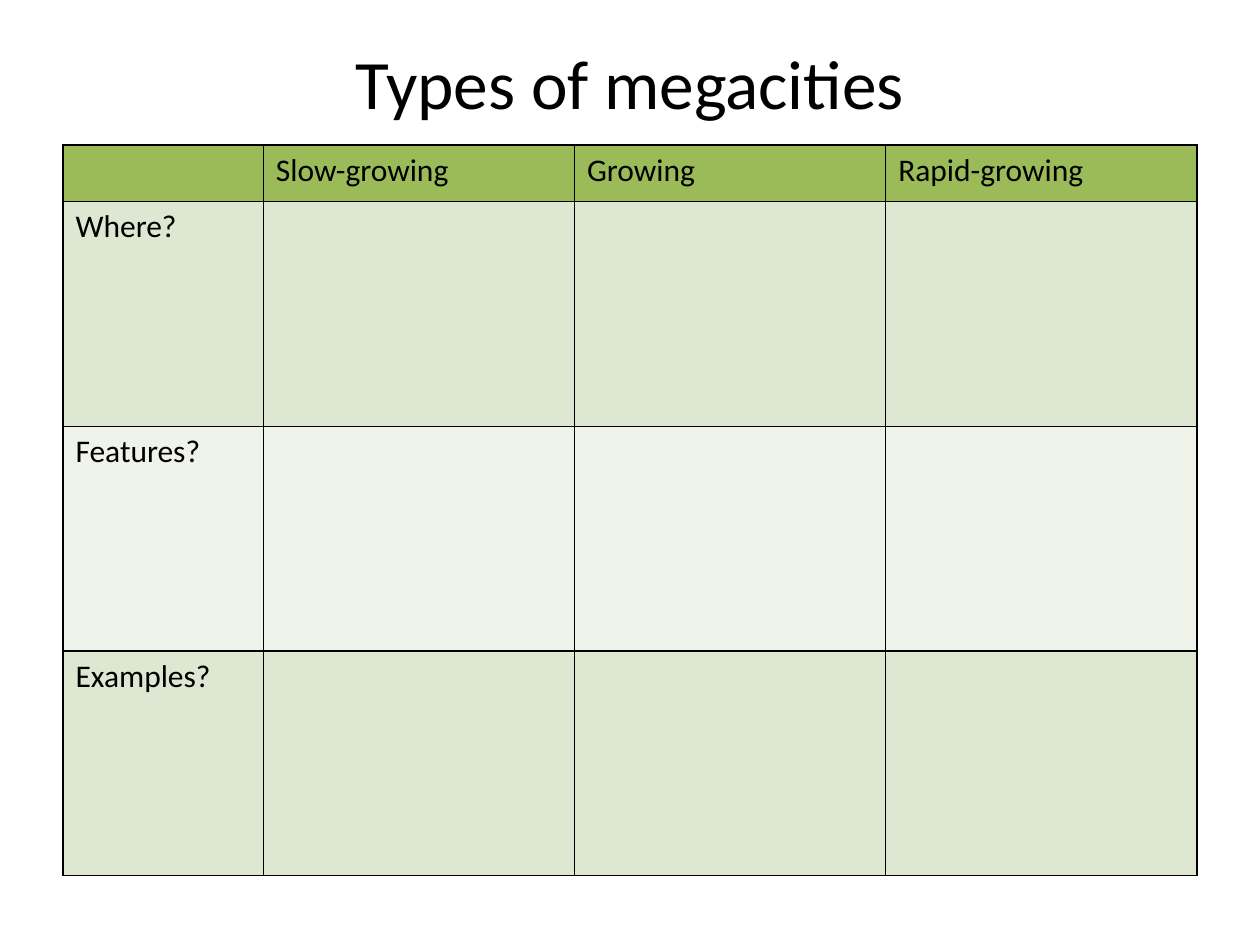
from dataclasses import dataclass

from lxml.etree import SubElement
from pptx import Presentation
from pptx.dml.color import RGBColor
from pptx.enum.text import MSO_ANCHOR, PP_ALIGN
from pptx.oxml.ns import qn
from pptx.util import Inches, Pt


@dataclass(frozen=True)
class Theme:
    """Hold the colours, font and type sizes."""
    font: str = "Calibri"
    ink: str = "000000"
    head: str = "9BBB59"
    bands: tuple = ("DEE7D1", "EFF3EA")
    title: float = 39.6
    body: float = 18
    rule: float = 1


THEME = Theme()
WIDE, HIGH = 10, 7.5
HEADS = ("Slow-growing", "Growing", "Rapid-growing")
ROWS = ("Where?", "Features?", "Examples?")


def add_run(para, text, size):
    """Add one styled run to a paragraph."""
    run = para.add_run()
    run.text = text
    run.font.name = THEME.font
    run.font.size = Pt(size)
    run.font.color.rgb = RGBColor.from_string(THEME.ink)


def add_title(slide, box, text):
    """Place the centred title in its box."""
    frame = slide.shapes.add_textbox(*map(Inches, box)).text_frame
    frame.word_wrap = True
    frame.vertical_anchor = MSO_ANCHOR.MIDDLE
    frame.margin_top = frame.margin_bottom = 0
    para = frame.paragraphs[0]
    para.alignment = PP_ALIGN.CENTER
    add_run(para, text, THEME.title)


def add_rules(cell):
    """Draw a thin line on all four sides of a cell."""
    props = cell._tc.get_or_add_tcPr()
    for spot, side in enumerate(("lnL", "lnR", "lnT", "lnB")):
        line = SubElement(props, qn(f"a:{side}"), w=str(Pt(THEME.rule)))
        fill = SubElement(line, qn("a:solidFill"))
        SubElement(fill, qn("a:srgbClr"), val=THEME.ink)
        props.insert(spot, line)


def add_grid(slide, box, heads, rows):
    """Place the table, with a narrow first column and a low first row."""
    left, top, wide, high = box
    first, low = 1.59, 0.45
    grid = [("", *heads)] + [(name, *[""] * len(heads)) for name in rows]
    table = slide.shapes.add_table(
        len(grid), len(grid[0]), *map(Inches, box)).table
    for spot, col in enumerate(table.columns):
        col.width = Inches((wide - first) / len(heads) if spot else first)
    for spot, row in enumerate(table.rows):
        row.height = Inches((high - low) / len(rows) if spot else low)
        tint = THEME.bands[(spot - 1) % 2] if spot else THEME.head
        for cell, text in zip(row.cells, grid[spot]):
            cell.fill.solid()
            cell.fill.fore_color.rgb = RGBColor.from_string(tint)
            add_rules(cell)
            if text:
                add_run(cell.text_frame.paragraphs[0], text, THEME.body)


def main():
    """Build and save the slide."""
    deck = Presentation()
    deck.slide_width, deck.slide_height = Inches(WIDE), Inches(HIGH)
    slide = deck.slides.add_slide(deck.slide_layouts[6])
    edge, span = WIDE * 0.05, WIDE * 0.9
    add_title(slide, (edge, HIGH * 0.04, span, 0.69), "Types of megacities")
    add_grid(slide, (edge, 1.15, span, 5.8), HEADS, ROWS)
    deck.save("out.pptx")


if __name__ == "__main__":
    main()
